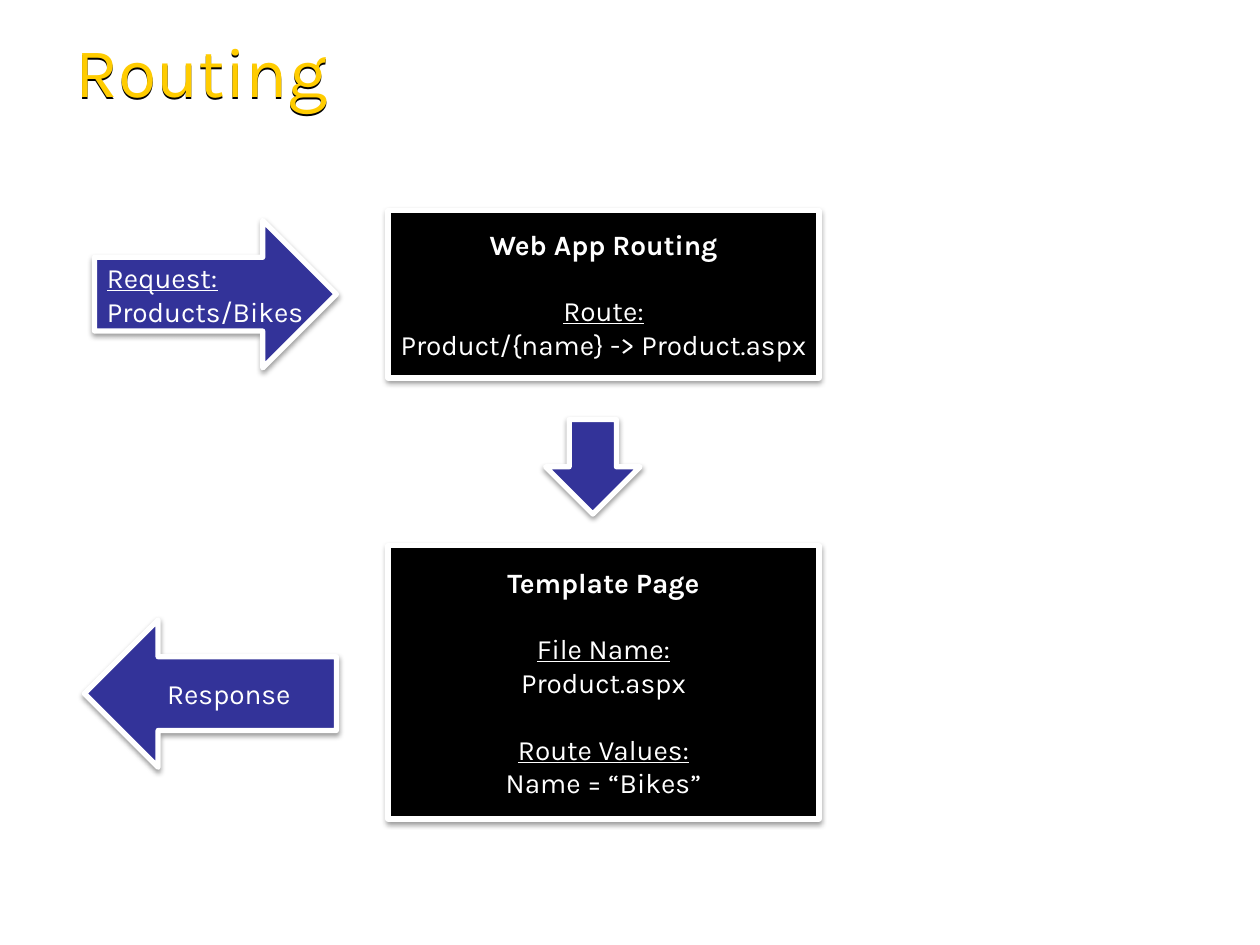
from pptx import Presentation
from pptx.dml.color import RGBColor
from pptx.enum.shapes import MSO_SHAPE as Shape
from pptx.enum.text import MSO_ANCHOR as Anchor, PP_ALIGN as Align
from pptx.oxml import parse_xml
from pptx.oxml.ns import nsdecls, qn
from pptx.util import Inches, Pt

GOLD = RGBColor(0xFF, 0xCC, 0x00)
INDIGO = RGBColor(0x33, 0x33, 0x99)
BLACK = RGBColor(0, 0, 0)
WHITE = RGBColor(0xFF, 0xFF, 0xFF)


class Deck:
    font = "Karla"
    size = 16
    blank_line = 19

    def __init__(self, prs):
        self.s = prs.slides.add_slide(prs.slide_layouts[6])

    def shadow(self, sp, blur, dist, alpha):
        sp.shadow.inherit = False
        effects = sp._element.spPr.find(qn("a:effectLst"))
        effects.append(parse_xml(
            f'<a:outerShdw {nsdecls("a")} blurRad="{Pt(blur)}" dist="{Pt(dist)}" '
            'dir="5400000" rotWithShape="0"><a:srgbClr val="000000">'
            f'<a:alpha val="{alpha * 1000}"/></a:srgbClr></a:outerShdw>'))

    def run(self, p, text, size, color, bold=False, underline=False):
        r = p.add_run()
        r.text = text
        r.font.name, r.font.size = self.font, Pt(size)
        r.font.color.rgb = color
        r.font.bold, r.font.underline = bold, underline

    def title(self, text, x, y, w, h):
        sp = self.s.shapes.add_textbox(Inches(x), Inches(y), Inches(w), Inches(h))
        tf = sp.text_frame
        tf.word_wrap = True
        self.run(tf.paragraphs[0], text, 40, GOLD)
        self.shadow(sp, 0, 1, 100)

    def block(self, kind, x, y, w, h, fill, groups=(), align=Align.CENTER):
        """Draw a shape; each group is a list of (text, style) lines."""
        sp = self.s.shapes.add_shape(kind, Inches(x), Inches(y), Inches(w), Inches(h))
        sp.fill.solid()
        sp.fill.fore_color.rgb = fill
        sp.line.color.rgb = WHITE
        sp.line.width = Pt(3)
        self.shadow(sp, 3.1, 1.6, 38)
        tf = sp.text_frame
        tf.word_wrap = False
        tf.vertical_anchor = Anchor.MIDDLE
        for g, lines in enumerate(groups):
            for i, (text, style) in enumerate(lines):
                p = tf.paragraphs[0] if g == i == 0 else tf.add_paragraph()
                p.alignment = align
                if g and i == 0:
                    p.space_before = Pt(self.blank_line)
                self.run(p, text, self.size, WHITE, **style)


def main():
    prs = Presentation()
    prs.slide_width, prs.slide_height = Inches(10), Inches(7.5)
    deck = Deck(prs)
    plain, bold, under = {}, {"bold": True}, {"underline": True}

    deck.title("Routing", 0.5, 0.17, 9, 0.65)

    # Incoming request
    deck.block(Shape.RIGHT_ARROW, 0.75, 1.75, 1.92, 1.17, INDIGO,
               [[("Request:", under), ("Products/Bikes", plain)]], Align.LEFT)

    # Routing and page boxes
    deck.block(Shape.RECTANGLE, 3.08, 1.67, 3.42, 1.33, BLACK,
               [[("Web App Routing", bold)],
                [("Route:", under), ("Product/{name} -> Product.aspx", plain)]])
    deck.block(Shape.RECTANGLE, 3.08, 4.33, 3.42, 2.17, BLACK,
               [[("Template Page", bold)],
                [("File Name:", under), ("Product.aspx", plain)],
                [("Route Values:", under), ("Name = “Bikes”", plain)]])

    # Response and the step between the boxes
    deck.block(Shape.LEFT_ARROW, 0.67, 4.92, 2, 1.17, INDIGO,
               [[("Response", plain)]])
    deck.block(Shape.DOWN_ARROW, 4.33, 3.33, 0.75, 0.75, INDIGO)

    prs.save("out.pptx")


if __name__ == "__main__":
    main()
